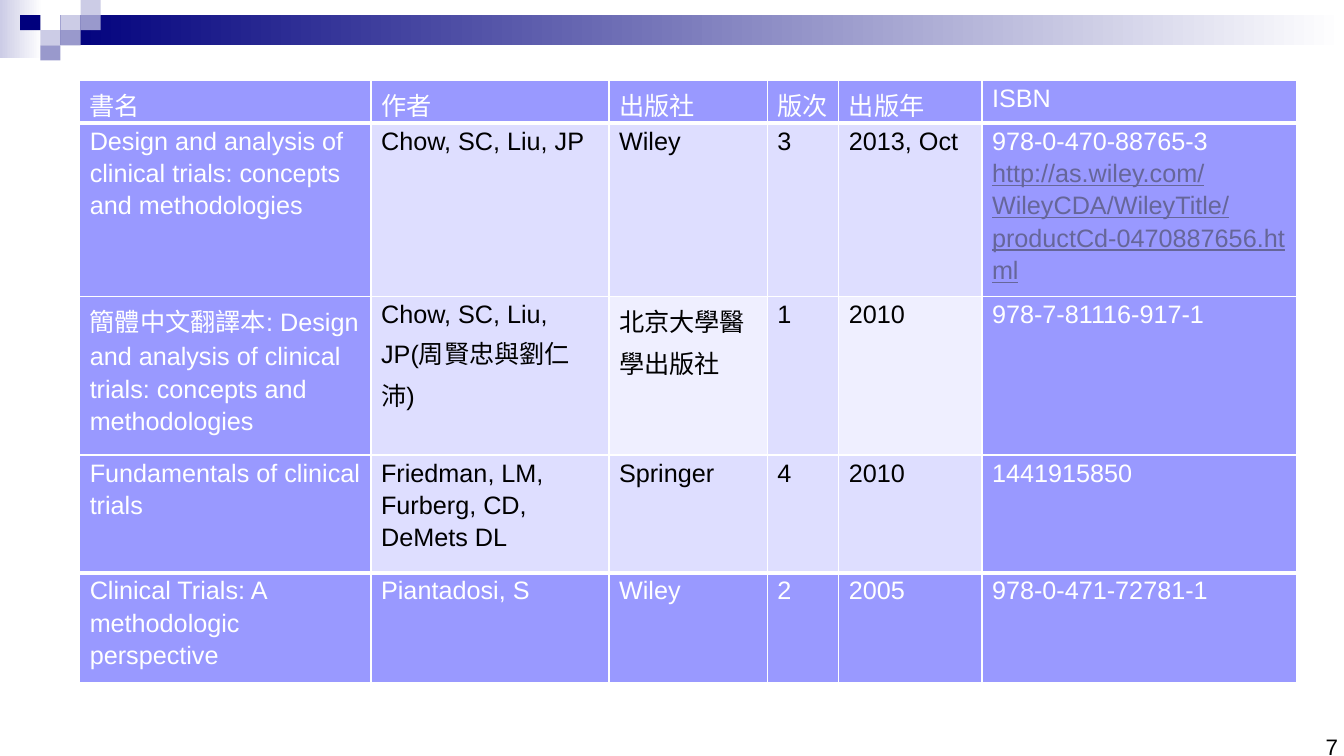
from lxml.etree import SubElement
from pptx import Presentation
from pptx.dml.color import RGBColor
from pptx.enum.shapes import MSO_SHAPE
from pptx.enum.text import MSO_ANCHOR, PP_ALIGN
from pptx.oxml.ns import qn
from pptx.util import Inches, Pt

COLORS = {
    "navy": "00007D", "pale": "CCCCE6", "slate": "9999CC", "white": "FFFFFF",
    "black": "000000", "accent": "9999FF", "tint": "DEDEFF", "light": "EFEFFF",
    "address": "666699",
}


def color(name):
    return RGBColor.from_string(COLORS[name])


def add_block(left, top, width, height, name, fade=False):
    shape = slide.shapes.add_shape(
        MSO_SHAPE.RECTANGLE, Inches(left), Inches(top), Inches(width), Inches(height))
    shape.shadow.inherit = False
    shape.line.fill.background()
    if fade:
        shape.fill.gradient()
        shape.fill.gradient_angle = 0
        for stop, stop_name in zip(shape.fill.gradient_stops, (name, "white")):
            stop.color.rgb = color(stop_name)
    else:
        shape.fill.solid()
        shape.fill.fore_color.rgb = color(name)


presentation = Presentation()
presentation.slide_width = Inches(13.33)
presentation.slide_height = Inches(7.5)
slide = presentation.slides.add_slide(presentation.slide_layouts[6])

# Header band: two fades and a checker of small tiles (column, row, colour)
add_block(0, 0, 0.42, 0.58, "pale", fade=True)
add_block(0.6, 0.15, 12.73, 0.3, "navy", fade=True)
TILE_WIDTH, TILE_HEIGHT = 0.2, 0.15
tiles = [
    (3, 1, "pale"), (4, 0, "pale"), (4, 1, "slate"), (2, 2, "pale"),
    (1, 1, "navy"), (3, 2, "slate"), (2, 3, "slate"),
]
for column, row, name in tiles:
    add_block(column * TILE_WIDTH, row * TILE_HEIGHT, TILE_WIDTH, TILE_HEIGHT, name)

# Slide number
number_box = slide.shapes.add_textbox(Inches(10.29), Inches(7.11), Inches(3.11), Inches(0.5))
frame = number_box.text_frame
frame.word_wrap = True
frame.vertical_anchor = MSO_ANCHOR.BOTTOM
frame.margin_left = frame.margin_right = Inches(0.13)
frame.margin_top = frame.margin_bottom = Inches(0.07)
paragraph = frame.paragraphs[0]
paragraph.text = "7"
paragraph.alignment = PP_ALIGN.RIGHT
paragraph.font.size = Pt(16)
paragraph.font.name = "Arial"
paragraph.font.color.rgb = color("black")

# Book table
books = [
    ["書名", "作者", "出版社", "版次", "出版年", "ISBN"],
    ["Design and analysis of clinical trials: concepts and methodologies",
     "Chow, SC, Liu, JP", "Wiley", "3", "2013, Oct",
     "978-0-470-88765-3\nhttp://as.wiley.com/WileyCDA/WileyTitle/productCd-0470887656.html"],
    ["簡體中文翻譯本: Design and analysis of clinical trials: concepts and methodologies",
     "Chow, SC, Liu, JP(周賢忠與劉仁沛)", "北京大學醫學出版社", "1", "2010",
     "978-7-81116-917-1"],
    ["Fundamentals of clinical trials", "Friedman, LM, Furberg, CD, DeMets DL",
     "Springer", "4", "2010", "1441915850"],
    ["Clinical Trials: A methodologic perspective", "Piantadosi, S", "Wiley", "2",
     "2005", "978-0-471-72781-1"],
]
column_widths = [2.89, 2.36, 1.57, 0.71, 1.42, 3.12]
row_heights = [0.42, 1.61, 1.57, 1.17, 1.09]
last_row, last_column = len(row_heights) - 1, len(column_widths) - 1
light_cells = {(2, 2), (2, 4)}
thick_borders = {(0, "lnB"), (1, "lnT"), (last_row - 1, "lnB"), (last_row, "lnT")}

table = slide.shapes.add_table(
    len(row_heights), len(column_widths), Inches(0.79), Inches(0.8),
    Inches(sum(column_widths)), Inches(sum(row_heights))).table
table.first_row = table.horz_banding = False
for table_column, width in zip(table.columns, column_widths):
    table_column.width = Inches(width)
for table_row, height in zip(table.rows, row_heights):
    table_row.height = Inches(height)

for row, book in enumerate(books):
    for column, text in enumerate(book):
        cell = table.cell(row, column)
        cell.margin_left = cell.margin_right = Inches(0.1)
        cell.margin_top = cell.margin_bottom = 0
        edge = row in (0, last_row) or column in (0, last_column)

        # Borders come before the fill in the cell properties
        properties = cell._tc.get_or_add_tcPr()
        for side in ("lnL", "lnR", "lnT", "lnB"):
            points = 3 if (row, side) in thick_borders else 1
            border = SubElement(properties, qn(f"a:{side}"), w=str(Pt(points)))
            border_fill = SubElement(border, qn("a:solidFill"))
            SubElement(border_fill, qn("a:srgbClr"), val=COLORS["white"])
        cell.fill.solid()
        tint = "light" if (row, column) in light_cells else "tint"
        cell.fill.fore_color.rgb = color("accent" if edge else tint)

        # Text, with the web address underlined
        cell.text = text
        for paragraph in cell.text_frame.paragraphs:
            paragraph.line_spacing = 1.15
            paragraph.font.size = Pt(18)
            paragraph.font.name = "Arial"
            paragraph.font.color.rgb = color("white" if edge else "black")
            if paragraph.text.startswith("http"):
                paragraph.font.underline = True
                paragraph.font.color.rgb = color("address")

presentation.save("out.pptx")
